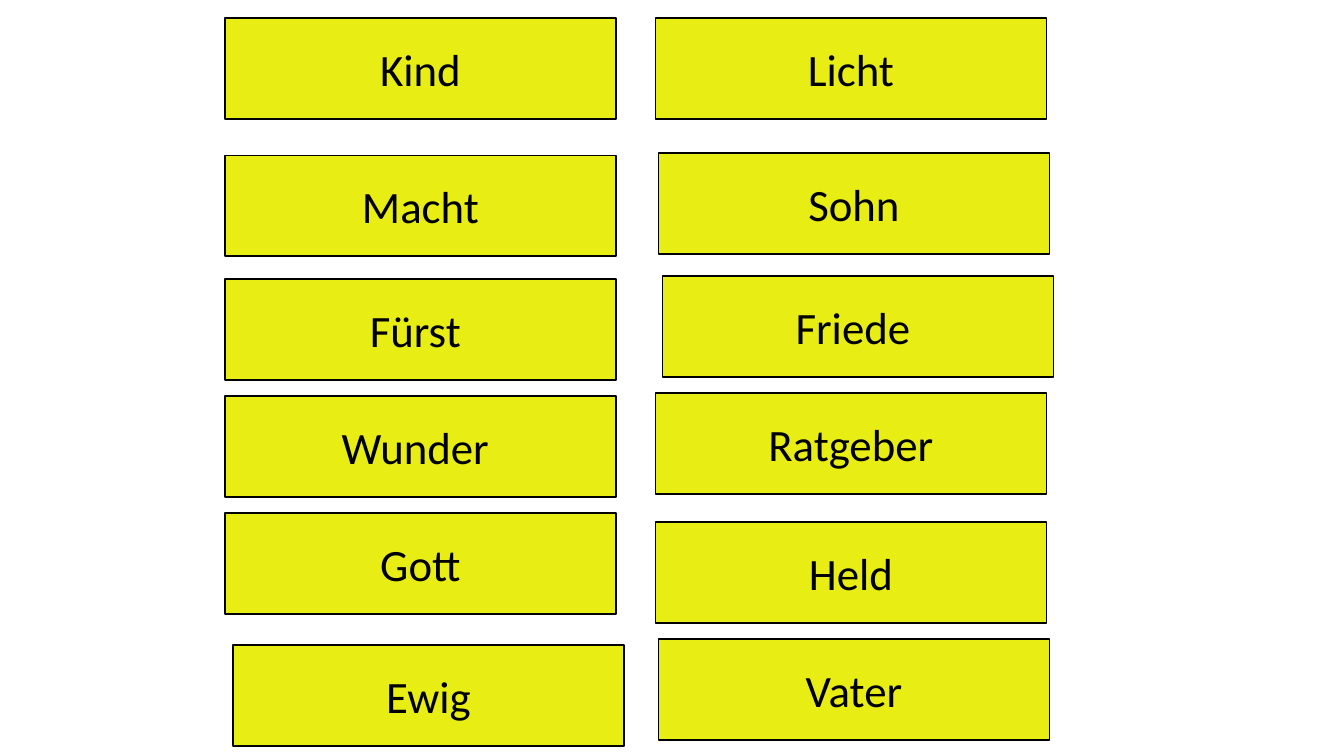
from dataclasses import dataclass

from pptx import Presentation
from pptx import util as u
from pptx.dml.color import RGBColor
from pptx.enum import shapes, text

PX = 9144
SLIDE_WIDTH, SLIDE_HEIGHT = 1333, 750
CARD_WIDTH, CARD_HEIGHT = 388, 100

CARDS = [
    ("Kind", 223, 18),
    ("Macht", 223, 154),
    ("Ratgeber", 650, 390),
    ("Wunder ", 223, 393),
    ("Sohn", 653, 152),
    ("Held", 650, 518),
    ("Gott", 223, 509),
    ("Ewig", 231, 640),
    ("Vater", 653, 634),
    ("Fürst ", 223, 277),
    ("Friede ", 657, 274),
    ("Licht", 650, 18),
]


@dataclass(frozen=True)
class Theme:
    """Colours and type of the word cards."""
    card: RGBColor = RGBColor.from_string("E8ED13")
    ink: RGBColor = RGBColor.from_string("000000")
    font: str = "Calibri"
    word_size: int = 32
    border: int = 1


THEME = Theme()


def px(length):
    """Turn a length in px into EMU."""
    return u.Emu(length * PX)


def add_card(slide, word, left, top):
    """Add one bordered card with a centred word."""
    card = slide.shapes.add_shape(
        shapes.MSO_SHAPE.RECTANGLE,
        px(left), px(top), px(CARD_WIDTH), px(CARD_HEIGHT),
    )
    card.shadow.inherit = False
    card.fill.solid()
    card.fill.fore_color.rgb = THEME.card
    card.line.color.rgb = THEME.ink
    card.line.width = u.Pt(THEME.border)

    frame = card.text_frame
    frame.word_wrap = True
    frame.vertical_anchor = text.MSO_ANCHOR.MIDDLE
    paragraph = frame.paragraphs[0]
    paragraph.text = word
    paragraph.alignment = text.PP_ALIGN.CENTER
    paragraph.font.name = THEME.font
    paragraph.font.size = u.Pt(THEME.word_size)
    paragraph.font.color.rgb = THEME.ink


def main():
    """Build the slide of word cards and save it."""
    presentation = Presentation()
    presentation.slide_width = px(SLIDE_WIDTH)
    presentation.slide_height = px(SLIDE_HEIGHT)
    slide = presentation.slides.add_slide(presentation.slide_layouts[6])
    for word, left, top in CARDS:
        add_card(slide, word, left, top)
    presentation.save("out.pptx")


if __name__ == "__main__":
    main()
